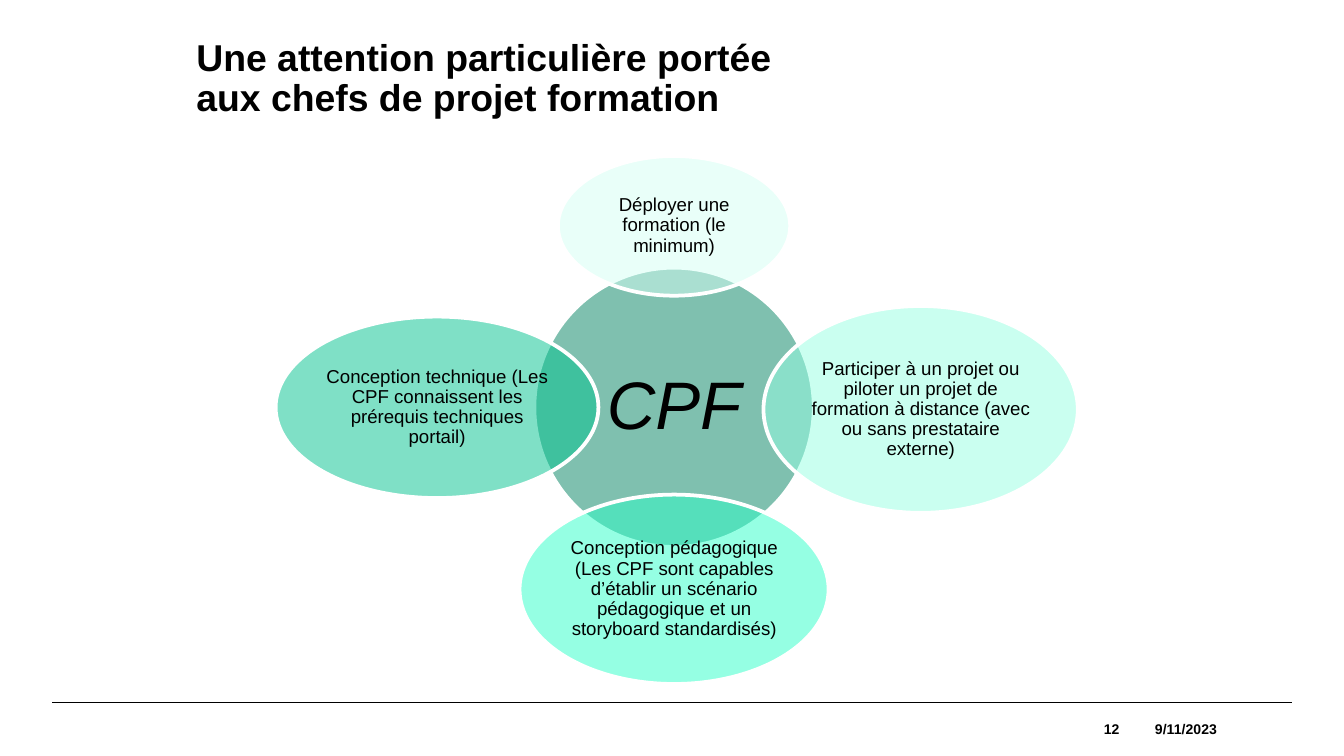
from math import sqrt

from pptx import Presentation
from pptx.dml.color import RGBColor
from pptx.enum.shapes import MSO_CONNECTOR, MSO_SHAPE
from pptx.enum.text import MSO_ANCHOR, MSO_AUTO_SIZE, PP_ALIGN
from pptx.oxml.ns import qn
from pptx.oxml.xmlchemy import OxmlElement
from pptx.util import Cm, Pt

ELLIPSE = MSO_SHAPE.OVAL
STRAIGHT = MSO_CONNECTOR.STRAIGHT
TOP, MIDDLE = MSO_ANCHOR.TOP, MSO_ANCHOR.MIDDLE
LEFT, CENTER, RIGHT = PP_ALIGN.LEFT, PP_ALIGN.CENTER, PP_ALIGN.RIGHT
NO_FIT = MSO_AUTO_SIZE.NONE
TITLE_ONLY = 5

BLACK = RGBColor(0x00, 0x00, 0x00)
WHITE = RGBColor(0xFF, 0xFF, 0xFF)
DARK_GREEN = RGBColor(0x00, 0x82, 0x60)
GREEN = RGBColor(0x00, 0xC2, 0x8F)
BRIGHT_MINT = RGBColor(0x2C, 0xFF, 0xC8)
MINT = RGBColor(0x96, 0xFF, 0xE3)
PALE_MINT = RGBColor(0xD5, 0xFF, 0xF4)


def write(frame, text, size=10, bold=False, italic=False, align=CENTER,
          anchor=MIDDLE, spacing=0.9, inset=0):
    """Fill a text frame; a vertical tab in the text is a line break."""
    frame.text = text
    frame.word_wrap = True
    frame.auto_size = NO_FIT
    frame.vertical_anchor = anchor
    frame.margin_left = frame.margin_right = Cm(inset)
    frame.margin_top = frame.margin_bottom = Cm(inset)
    for para in frame.paragraphs:
        para.alignment = align
        para.line_spacing = spacing
        for span in para.runs:
            span.font.name = "Arial"
            span.font.size = Pt(size)
            span.font.bold = bold
            span.font.italic = italic
            span.font.color.rgb = BLACK


class Page:
    """The current slide and the style of its elements; lengths in cm."""

    def __init__(self, deck):
        self.slide = deck.slides.add_slide(deck.slide_layouts[TITLE_ONLY])
        self.shapes = self.slide.shapes

    def title(self, text, left, top, width, height):
        title = self.shapes.title
        title.left, title.top = Cm(left), Cm(top)
        title.width, title.height = Cm(width), Cm(height)
        write(title.text_frame, text, size=20, bold=True, align=LEFT, anchor=TOP)

    def rule(self, left, right, y):
        rule = self.shapes.add_connector(STRAIGHT, Cm(left), Cm(y), Cm(right), Cm(y))
        rule.line.color.rgb = BLACK
        rule.line.width = Pt(0.8)
        rule._element.spPr.append(OxmlElement("a:effectLst"))

    def text(self, text, left, top, width, height, **style):
        box = self.shapes.add_textbox(Cm(left), Cm(top), Cm(width), Cm(height))
        write(box.text_frame, text, **style)

    def bubble(self, text, x, y, width, height, color, **style):
        """Translucent ellipse centred on x, y, with text in its inner rectangle."""
        bubble = self.shapes.add_shape(ELLIPSE, Cm(x - width / 2), Cm(y - height / 2),
                                       Cm(width), Cm(height))
        bubble.shadow.inherit = False
        bubble.fill.solid()
        bubble.fill.fore_color.rgb = color
        alpha = OxmlElement("a:alpha")
        alpha.set("val", "50000")
        bubble._element.spPr.find(qn("a:solidFill"))[0].append(alpha)
        bubble.line.color.rgb = WHITE
        bubble.line.width = Pt(2)
        inner_width, inner_height = width / sqrt(2), height / sqrt(2)
        self.text(text, x - inner_width / 2, y - inner_height / 2,
                  inner_width, inner_height, **style)


def main():
    deck = Presentation()
    deck.slide_width, deck.slide_height = Cm(25.4), Cm(14.29)
    page = Page(deck)

    # Title and footer
    page.rule(0.99, 24.41, 13.28)
    page.title("Une attention particulière portée\vaux chefs de projet formation",
               3.71, 0.74, 20.19, 2)
    footer = dict(size=7.5, bold=True, spacing=1)
    page.text("9/11/2023", 21.16, 13.28, 2.51, 1, **footer)
    page.text("12", 17.4, 13.28, 3.76, 1, align=RIGHT, **footer)

    # Central circle
    center_x, center_y = 12.74, 7.7
    page.bubble("CPF", center_x, center_y, 5.28, 5.28, DARK_GREEN,
                size=36, italic=True, inset=0.13)

    # Surrounding ellipses, clockwise from the top
    around = [
        ("Déployer une formation (le minimum)",
         center_x, 4.27, 4.39, 2.64, PALE_MINT),
        ("Participer à un projet ou piloter un projet de formation à distance "
         "(avec ou sans prestataire externe)",
         17.4, 7.74, 5.94, 3.91, MINT),
        ("Conception pédagogique (Les CPF sont capables d’établir un scénario "
         "pédagogique et un storyboard standardisés)",
         center_x, 11.14, 5.84, 3.58, BRIGHT_MINT),
        ("Conception technique (Les CPF connaissent les prérequis techniques portail)",
         8.26, center_y, 6.1, 3.43, GREEN),
    ]
    for text, x, y, width, height, color in around:
        page.bubble(text, x, y, width, height, color, inset=0.03)

    deck.save("out.pptx")


if __name__ == "__main__":
    main()
